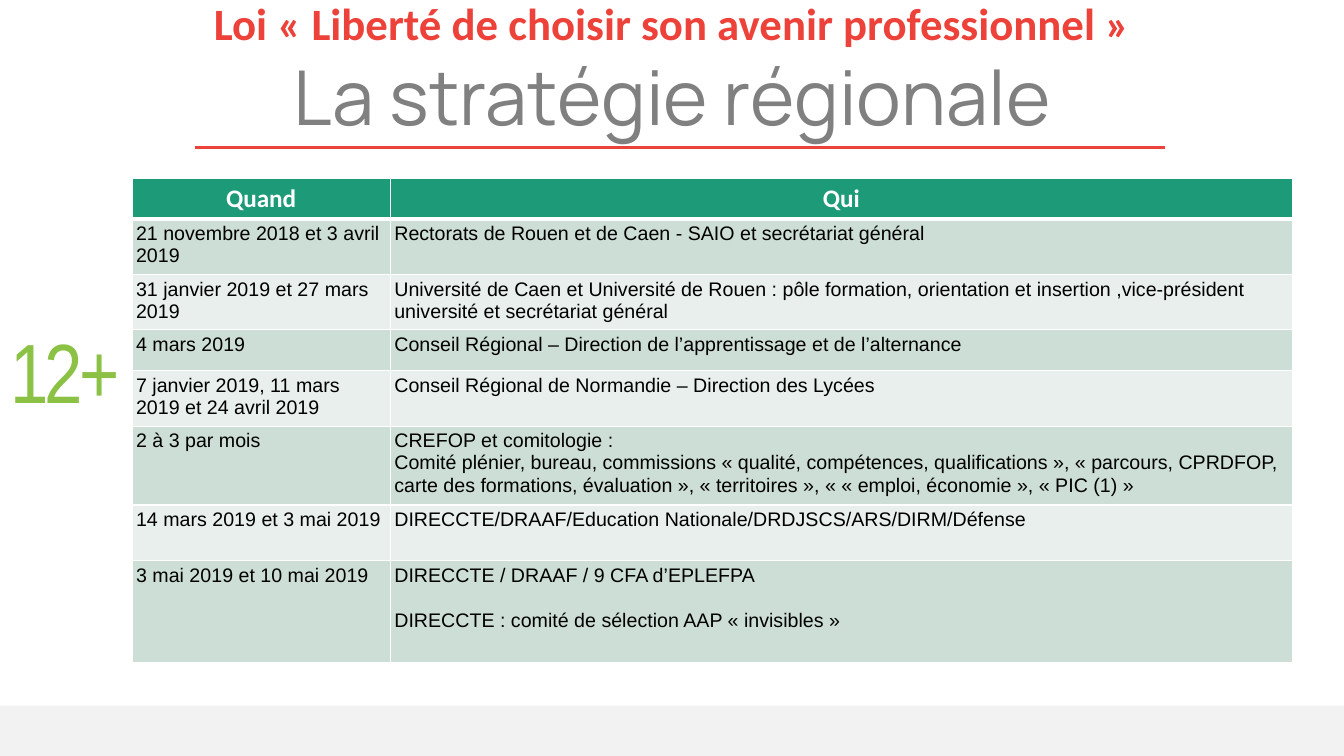
from dataclasses import dataclass

from lxml import etree
from pptx import Presentation
from pptx.dml.color import RGBColor
from pptx.enum import shapes, text
from pptx.oxml.ns import qn
from pptx.util import Pt

WHITE, RED, GREEN = "FFFFFF", "ED423A", "1D9A78"
BANDS = ("CDDED6", "E8EFEC")


@dataclass
class Row:
    high: float
    date: str
    who: list[str]
    gap: float = 0


ROWS = [
    Row(39.4, "21 novembre 2018 et 3 avril 2019",
        ["Rectorats de Rouen et de Caen - SAIO et secrétariat général"]),
    Row(39.8, "31 janvier 2019 et 27 mars 2019",
        ["Université de Caen et Université de Rouen : pôle formation, orientation "
         "et insertion ,vice-président université et secrétariat général"]),
    Row(29.3, "4 mars 2019",
        ["Conseil Régional – Direction de l’apprentissage et de l’alternance"]),
    Row(39.4, "7 janvier 2019, 11 mars 2019 et 24 avril 2019",
        ["Conseil Régional de Normandie – Direction des Lycées"]),
    Row(56.4, "2 à 3 par mois",
        ["CREFOP et comitologie :",
         "Comité plénier, bureau, commissions « qualité, compétences, "
         "qualifications », « parcours, CPRDFOP, carte des formations, "
         "évaluation », « territoires », « « emploi, économie », « PIC (1) »"]),
    Row(39.8, "14 mars 2019 et 3 mai 2019",
        ["DIRECCTE/DRAAF/Education Nationale/DRDJSCS/ARS/DIRM/Défense"]),
    Row(72.9, "3 mai 2019 et 10 mai 2019",
        ["DIRECCTE / DRAAF / 9 CFA d’EPLEFPA",
         "DIRECCTE : comité de sélection AAP « invisibles »"], gap=16),
]


def paint(item, color: str) -> None:
    if hasattr(item, "solid"):
        item.solid()
        item = item.fore_color
    item.rgb = RGBColor.from_string(color)


def place(shape, left: float, top: float, width: float, height: float) -> None:
    shape.left, shape.top = Pt(left), Pt(top)
    shape.width, shape.height = Pt(width), Pt(height)


def write(frame, words: str, *, size: float, font: str, color: str,
          bold: bool = False, center: bool = False, more: bool = False,
          gap: float = 0, track: float = 0) -> None:
    para = frame.add_paragraph() if more else frame.paragraphs[0]
    para.alignment = text.PP_ALIGN.CENTER if center else text.PP_ALIGN.LEFT
    para.space_before = Pt(gap)
    run = para.add_run()
    run.text = words
    run.font.size, run.font.name, run.font.bold = Pt(size), font, bold
    paint(run.font.color, color)
    if track:
        run.font._element.set("spc", str(int(track * 100)))


def edge(cell, base: float) -> None:
    props = cell._tc.get_or_add_tcPr()
    sides = {"a:lnL": 1, "a:lnR": 1, "a:lnT": 1, "a:lnB": base}
    for spot, (tag, width) in enumerate(sides.items()):
        line = etree.Element(qn(tag), w=str(Pt(width)))
        fill = etree.SubElement(line, qn("a:solidFill"))
        etree.SubElement(fill, qn("a:srgbClr"), val=WHITE)
        props.insert(spot, line)


def add_head(slide) -> None:
    title = slide.shapes.title
    place(title, 87.8, -6.5, 784.8, 111.6)
    frame = title.text_frame
    frame.word_wrap = True
    frame.auto_size = text.MSO_AUTO_SIZE.NONE
    frame.vertical_anchor = text.MSO_ANCHOR.TOP
    write(frame, "Loi « Liberté de choisir son avenir professionnel »",
          size=32, font="Calibri", color=RED, bold=True, center=True)
    write(frame, "La stratégie régionale", size=54, font="Manrope",
          color="808080", center=True, more=True)
    rule = slide.shapes.add_connector(
        shapes.MSO_CONNECTOR.STRAIGHT, Pt(139), Pt(105.1), Pt(832.3), Pt(105.1))
    rule.line.width = Pt(2.25)
    paint(rule.line.fill, RED)
    etree.SubElement(rule._element.spPr, qn("a:effectLst"))


def add_count(slide) -> None:
    box = slide.shapes.add_textbox(Pt(-1.4), Pt(224.6), Pt(95.8), Pt(152.6))
    box.text_frame.word_wrap = True
    write(box.text_frame, "12+", size=60, font="Arial Narrow",
          color="8BC145", center=True, track=-3)


def add_foot(slide) -> None:
    foot = slide.shapes.add_shape(
        shapes.MSO_SHAPE.RECTANGLE, 0, Pt(504), Pt(960), Pt(37.4))
    foot.shadow.inherit = False
    paint(foot.fill, "F2F2F2")
    foot.line.fill.background()


def add_plan(slide) -> None:
    high = [28.8] + [row.high for row in ROWS]
    table = slide.shapes.add_table(
        len(high), 2, Pt(94.3), Pt(127.6), Pt(829), Pt(sum(high))).table
    for col, width in zip(table.columns, (184.5, 644.5)):
        col.width = Pt(width)
    for line, size in zip(table.rows, high):
        line.height = Pt(size)
    for cell, label in zip(table.rows[0].cells, ("Quand", "Qui")):
        paint(cell.fill, GREEN)
        edge(cell, 3)
        write(cell.text_frame, label, size=18, font="Calibri",
              color=WHITE, bold=True, center=True)
    for spot, row in enumerate(ROWS):
        for col, parts in enumerate(([row.date], row.who)):
            cell = table.cell(spot + 1, col)
            cell.margin_left = cell.margin_right = Pt(2.9)
            cell.margin_top = cell.margin_bottom = Pt(2.9)
            paint(cell.fill, BANDS[spot % 2])
            edge(cell, 1)
            for rank, part in enumerate(parts):
                write(cell.text_frame, part, size=14, font="Arial",
                      color="000000", more=rank > 0, gap=row.gap if rank else 0)


def main() -> None:
    deck = Presentation()
    deck.slide_width, deck.slide_height = Pt(960), Pt(540)
    slide = deck.slides.add_slide(deck.slide_layouts[5])
    add_foot(slide)
    add_head(slide)
    add_count(slide)
    add_plan(slide)
    deck.save("out.pptx")


if __name__ == "__main__":
    main()
